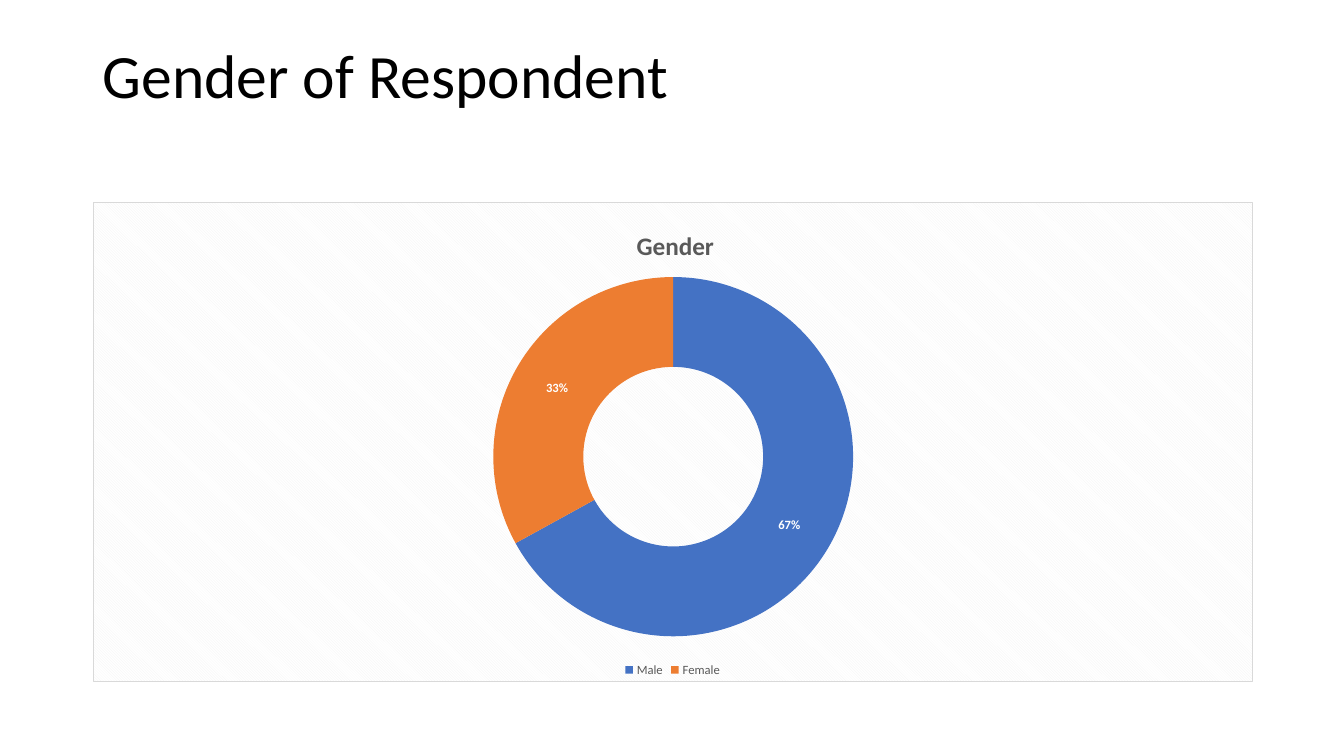
from dataclasses import dataclass

from lxml import etree
from pptx import Presentation
from pptx import util as u
from pptx.chart.data import CategoryChartData
from pptx.dml.color import RGBColor
from pptx.enum import chart as charts, text
from pptx.oxml import parse_xml
from pptx.oxml.ns import nsdecls, qn

FONT = "Calibri"
BLACK = RGBColor(0x00, 0x00, 0x00)
WHITE = RGBColor(0xFF, 0xFF, 0xFF)
GREY = RGBColor(0x59, 0x59, 0x59)
STRIPE = RGBColor(0xF2, 0xF2, 0xF2)
BORDER = RGBColor(0xD9, 0xD9, 0xD9)
BLUE = RGBColor(0x44, 0x72, 0xC4)
ORANGE = RGBColor(0xED, 0x7D, 0x31)

WIDTH, HEIGHT = u.Inches(13.33), u.Inches(7.5)
HOLE_PERCENT = 70


@dataclass(frozen=True)
class Area:
    """A rectangle in shares of the slide or chart size."""
    left: float
    top: float
    width: float
    height: float

    def on_slide(self) -> tuple[int, int, int, int]:
        return (int(self.left * WIDTH), int(self.top * HEIGHT),
                int(self.width * WIDTH), int(self.height * HEIGHT))


@dataclass(frozen=True)
class Answer:
    label: str
    percent: int
    color: RGBColor


TITLE_AREA = Area(0.069, 0.053, 0.863, 0.193)
CHART_AREA = Area(0.069, 0.267, 0.863, 0.635)
RING_AREA = Area(0.345, 0.156, 0.311, 0.75)
HEADING_AREA = Area(0.465, 0.045, 0, 0)
ANSWERS = [Answer("Male", 67, BLUE), Answer("Female", 33, ORANGE)]


def style(font, size: float, color: RGBColor, bold: bool = False) -> None:
    font.name, font.size, font.bold = FONT, u.Pt(size), bold
    font.color.rgb = color


def layout_xml(area: Area, inner: bool):
    """Manual chart layout; a size of zero stays automatic."""
    parts = '<c:layoutTarget val="inner"/>' if inner else ""
    parts += '<c:xMode val="edge"/><c:yMode val="edge"/>'
    parts += f'<c:x val="{area.left}"/><c:y val="{area.top}"/>'
    if area.width:
        parts += f'<c:w val="{area.width}"/><c:h val="{area.height}"/>'
    return parse_xml(f'<c:layout {nsdecls("c")}><c:manualLayout>{parts}'
                     '</c:manualLayout></c:layout>')


def place(parent: etree.ElementBase, area: Area, inner: bool = False) -> None:
    for old in parent.findall(qn("c:layout")):
        parent.remove(old)
    position = 0 if inner else 1
    parent.insert(position, layout_xml(area, inner))


def add_title(slide, wording: str) -> None:
    title = slide.shapes.title
    title.left, title.top, title.width, title.height = TITLE_AREA.on_slide()
    frame = title.text_frame
    frame.text = wording
    frame.vertical_anchor = text.MSO_ANCHOR.TOP
    para = frame.paragraphs[0]
    para.alignment = text.PP_ALIGN.LEFT
    para.line_spacing = 0.9
    style(para.runs[0].font, 44, BLACK)


def add_gender_chart(slide) -> None:
    data = CategoryChartData()
    data.categories = [answer.label for answer in ANSWERS]
    data.add_series("Series 1", [answer.percent for answer in ANSWERS])
    chart = slide.shapes.add_chart(
        charts.XL_CHART_TYPE.DOUGHNUT, *CHART_AREA.on_slide(), data).chart
    style(chart.font, 10, BLACK)

    # Heading and legend
    chart.has_title = True
    heading = chart.chart_title.text_frame
    heading.text = "Gender"
    style(heading.paragraphs[0].runs[0].font, 18, GREY, bold=True)
    chart.has_legend = True
    chart.legend.position = charts.XL_LEGEND_POSITION.BOTTOM
    chart.legend.include_in_layout = False
    style(chart.legend.font, 9, GREY)

    # Ring segments and their percentages
    plot = chart.plots[0]
    plot.vary_by_categories = True
    ring = plot.series[0]
    for index, answer in enumerate(ANSWERS):
        fill = ring.points[index].format.fill
        fill.solid()
        fill.fore_color.rgb = answer.color
    labels = ring.data_labels
    labels.show_percentage = True
    labels.show_value = False
    labels.number_format, labels.number_format_is_linked = "0%", False
    style(labels.font, 9, WHITE, bold=True)

    # Hole, layout, striped background and border
    space = chart.element
    next(space.iter(qn("c:holeSize"))).set("val", str(HOLE_PERCENT))
    place(next(space.iter(qn("c:plotArea"))), RING_AREA, inner=True)
    place(next(space.iter(qn("c:title"))), HEADING_AREA)
    space.find(qn("c:chart")).addnext(parse_xml(
        f'<c:spPr {nsdecls("c", "a")}><a:pattFill prst="dkDnDiag">'
        f'<a:fgClr><a:srgbClr val="{STRIPE}"/></a:fgClr>'
        f'<a:bgClr><a:srgbClr val="{WHITE}"/></a:bgClr></a:pattFill>'
        f'<a:ln w="{u.Pt(0.75)}"><a:solidFill><a:srgbClr val="{BORDER}"/>'
        '</a:solidFill></a:ln></c:spPr>'))


def main() -> None:
    deck = Presentation()
    deck.slide_width, deck.slide_height = WIDTH, HEIGHT
    page = deck.slides.add_slide(deck.slide_layouts[5])
    add_title(page, "Gender of Respondent")
    add_gender_chart(page)
    deck.save("out.pptx")


if __name__ == "__main__":
    main()
